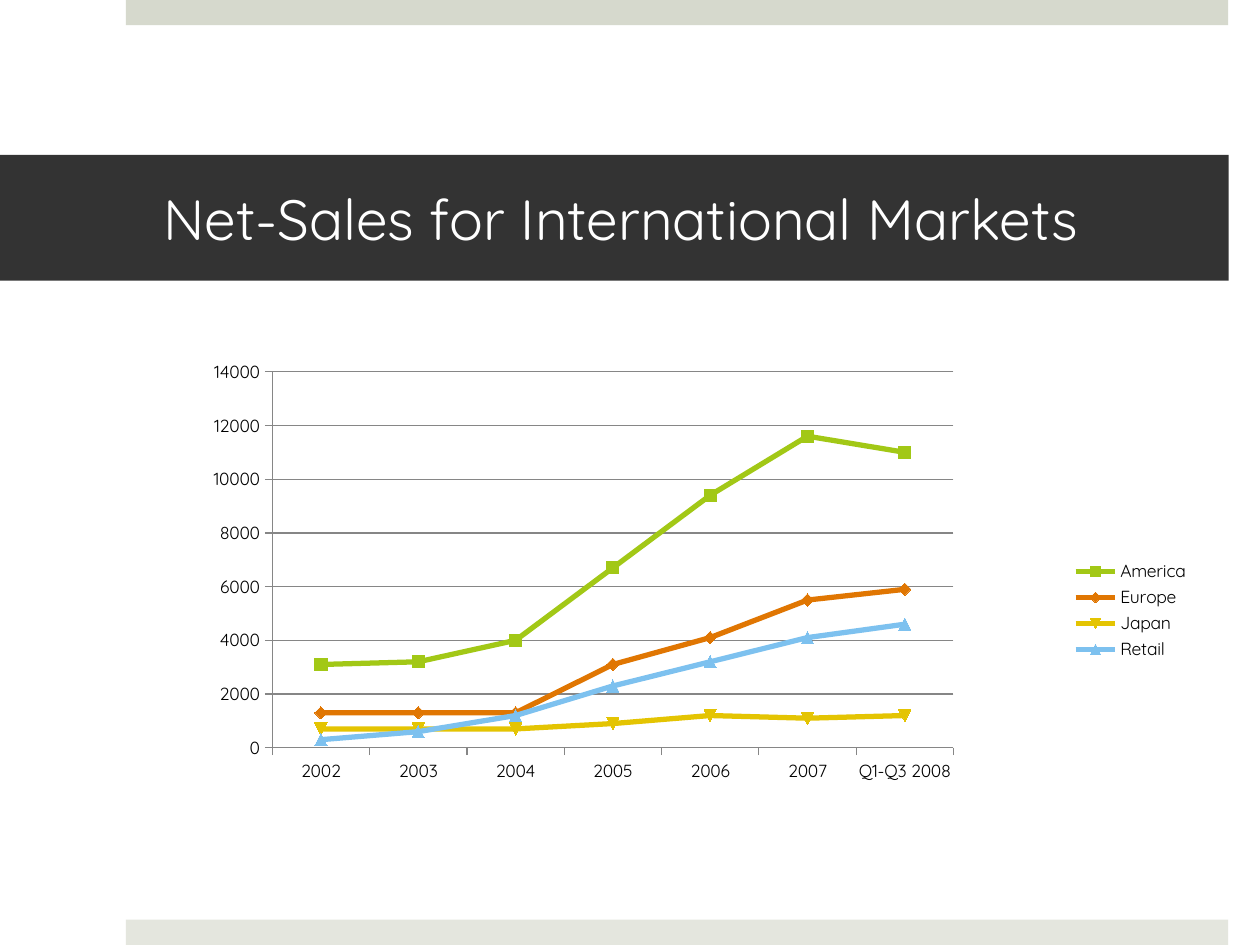
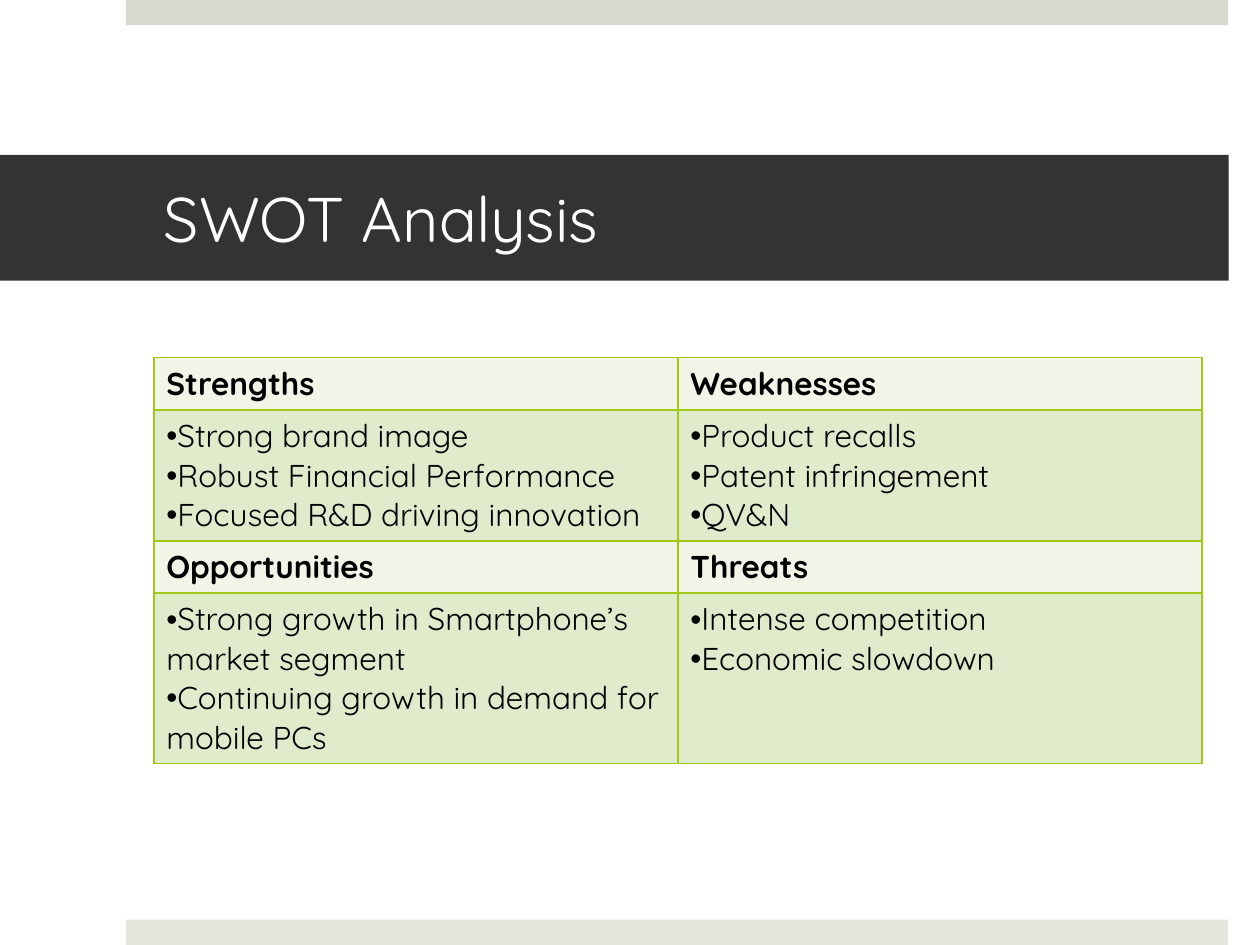
from lxml.etree import SubElement
from pptx import Presentation
from pptx.chart.data import CategoryChartData
from pptx.enum.chart import XL_CHART_TYPE, XL_LEGEND_POSITION, XL_TICK_MARK
from pptx.enum.shapes import MSO_SHAPE
from pptx.enum.text import MSO_ANCHOR, MSO_AUTO_SIZE, PP_ALIGN
from pptx.dml.color import RGBColor
from pptx.oxml.ns import qn
from pptx.util import Cm, Pt

FONT = "Quicksand"
WHITE, BLACK, CHARCOAL, GREY = "FFFFFF", "000000", "333333", "868686"
GREEN, ORANGE, YELLOW, BLUE = "A2C816", "E07602", "E4C402", "7DC1EF"
TOP_BAND, BOTTOM_BAND = "D6D9CD", "E4E6DE"
HEADING_FILL, LIST_FILL = "F0F5E8", "E0EBCC"
CONTENT_LEFT, CONTENT_TOP, CONTENT_WIDTH = Cm(3.1), Cm(7.21), Cm(21.13)


def paint(fill, hex_colour):
    fill.solid()
    fill.fore_color.rgb = RGBColor.from_string(hex_colour)


def style_font(font, size, hex_colour, bold=False):
    font.name = FONT
    font.size = Pt(size)
    font.bold = bold
    paint(font.fill, hex_colour)


deck = Presentation()
deck.slide_width, deck.slide_height = Cm(25.4), Cm(19.05)

# Bands and title bar on every slide
slides = []
for title_text, title_size in [("Net-Sales for International Markets", 32.4),
                               ("SWOT Analysis", 36)]:
    slide = deck.slides.add_slide(deck.slide_layouts[5])
    slides.append(slide)
    for band_top, band_colour in [(0, TOP_BAND), (18.54, BOTTOM_BAND)]:
        band = slide.shapes.add_shape(MSO_SHAPE.RECTANGLE, Cm(2.54), Cm(band_top),
                                      Cm(22.22), Cm(0.51))
        band.shadow.inherit = False
        paint(band.fill, band_colour)
        band.line.fill.background()

    title = slide.shapes.title
    title.left, title.top, title.width, title.height = Cm(0), Cm(3.12), Cm(24.77), Cm(2.54)
    paint(title.fill, CHARCOAL)
    frame = title.text_frame
    frame.text = title_text
    frame.word_wrap = True
    frame.auto_size = MSO_AUTO_SIZE.NONE
    frame.vertical_anchor = MSO_ANCHOR.MIDDLE
    frame.margin_left, frame.margin_right = Cm(3.3), Cm(0.76)
    frame.margin_top = frame.margin_bottom = Cm(0.13)
    para = frame.paragraphs[0]
    para.alignment = PP_ALIGN.LEFT
    style_font(para.runs[0].font, title_size, WHITE)

sales_slide, swot_slide = slides

# Sales chart
markets = [
    ("America", GREEN, [3100, 3200, 4000, 6700, 9400, 11600, 11000]),
    ("Europe", ORANGE, [1300, 1300, 1300, 3100, 4100, 5500, 5900]),
    ("Japan", YELLOW, [700, 700, 700, 900, 1200, 1100, 1200]),
    ("Retail", BLUE, [300, 600, 1200, 2300, 3200, 4100, 4600]),
]
sales = CategoryChartData()
sales.categories = ["2002", "2003", "2004", "2005", "2006", "2007", "Q1-Q3 2008"]
for market, _, values in markets:
    sales.add_series(market, values)
chart = sales_slide.shapes.add_chart(XL_CHART_TYPE.LINE_MARKERS, CONTENT_LEFT, CONTENT_TOP,
                                     CONTENT_WIDTH, Cm(10.19), sales).chart
chart.has_title = False
style_font(chart.font, 10, BLACK)
chart.has_legend = True
chart.legend.position = XL_LEGEND_POSITION.RIGHT
chart.legend.include_in_layout = False

plot = chart.plots[0]
plot.vary_by_categories = False
for series, (_, market_colour, _) in zip(plot.series, markets):
    series.smooth = False
    series.format.line.width = Pt(3)
    paint(series.format.line.fill, market_colour)
    series.marker.size = 7
    paint(series.marker.format.fill, market_colour)
    paint(series.marker.format.line.fill, market_colour)

value_axis, category_axis = chart.value_axis, chart.category_axis
value_axis.minimum_scale, value_axis.maximum_scale = 0, 14000
value_axis.major_unit = 2000
value_axis.has_major_gridlines = True
value_axis.major_tick_mark = XL_TICK_MARK.OUTSIDE
category_axis.major_tick_mark = XL_TICK_MARK.OUTSIDE
for lines in [value_axis, category_axis, value_axis.major_gridlines]:
    lines.format.line.width = Pt(0.75)
    paint(lines.format.line.fill, GREY)

# Fixed place of the plot area inside the chart
plot_area = plot._element.getparent()
layout = plot_area.find(qn("c:layout"))
if layout is None:
    layout = SubElement(plot_area, qn("c:layout"))
    plot_area.insert(0, layout)
manual = SubElement(layout, qn("c:manualLayout"))
for tag, setting in [("layoutTarget", "inner"), ("xMode", "edge"), ("yMode", "edge"),
                     ("x", "0.113"), ("y", "0.028"), ("w", "0.65"), ("h", "0.744")]:
    SubElement(manual, qn(f"c:{tag}"), val=setting)

# SWOT table: heading rows alternate with list rows
swot_rows = [
    [["Strengths"], ["Weaknesses"]],
    [["Strong brand image", "Robust Financial Performance", "Focused R&D driving innovation"],
     ["Product recalls", "Patent infringement", "QV&N"]],
    [["Opportunities"], ["Threats"]],
    [["Strong growth in Smartphone’s market segment",
      "Continuing growth in demand for mobile PCs"],
     ["Intense competition", "Economic slowdown"]],
]
row_heights = [1.04, 2.64, 1.04, 3.44]
table = swot_slide.shapes.add_table(4, 2, CONTENT_LEFT, CONTENT_TOP, CONTENT_WIDTH,
                                    Cm(sum(row_heights))).table
table.first_row = table.horz_banding = False
for row_index, row_texts in enumerate(swot_rows):
    table.rows[row_index].height = Cm(row_heights[row_index])
    is_heading = row_index % 2 == 0
    for column_index, lines in enumerate(row_texts):
        cell = table.cell(row_index, column_index)
        paint(cell.fill, HEADING_FILL if is_heading else LIST_FILL)
        cell.text_frame.text = "\n".join(lines)
        for para in cell.text_frame.paragraphs:
            style_font(para.runs[0].font, 18, BLACK, bold=is_heading)
            if not is_heading:
                properties = para._p.get_or_add_pPr()
                properties.set("marL", "0")
                properties.set("indent", "0")
                SubElement(properties, qn("a:buFont"), typeface="Arial")
                SubElement(properties, qn("a:buChar"), char="•")

        # Cell borders come before the fill in the cell properties
        cell_properties = cell._tc.get_or_add_tcPr()
        for position, side in enumerate(["lnL", "lnR", "lnT", "lnB"]):
            border = SubElement(cell_properties, qn(f"a:{side}"), w=str(Pt(1)))
            SubElement(SubElement(border, qn("a:solidFill")), qn("a:srgbClr"), val=GREEN)
            cell_properties.insert(position, border)

deck.save("out.pptx")
